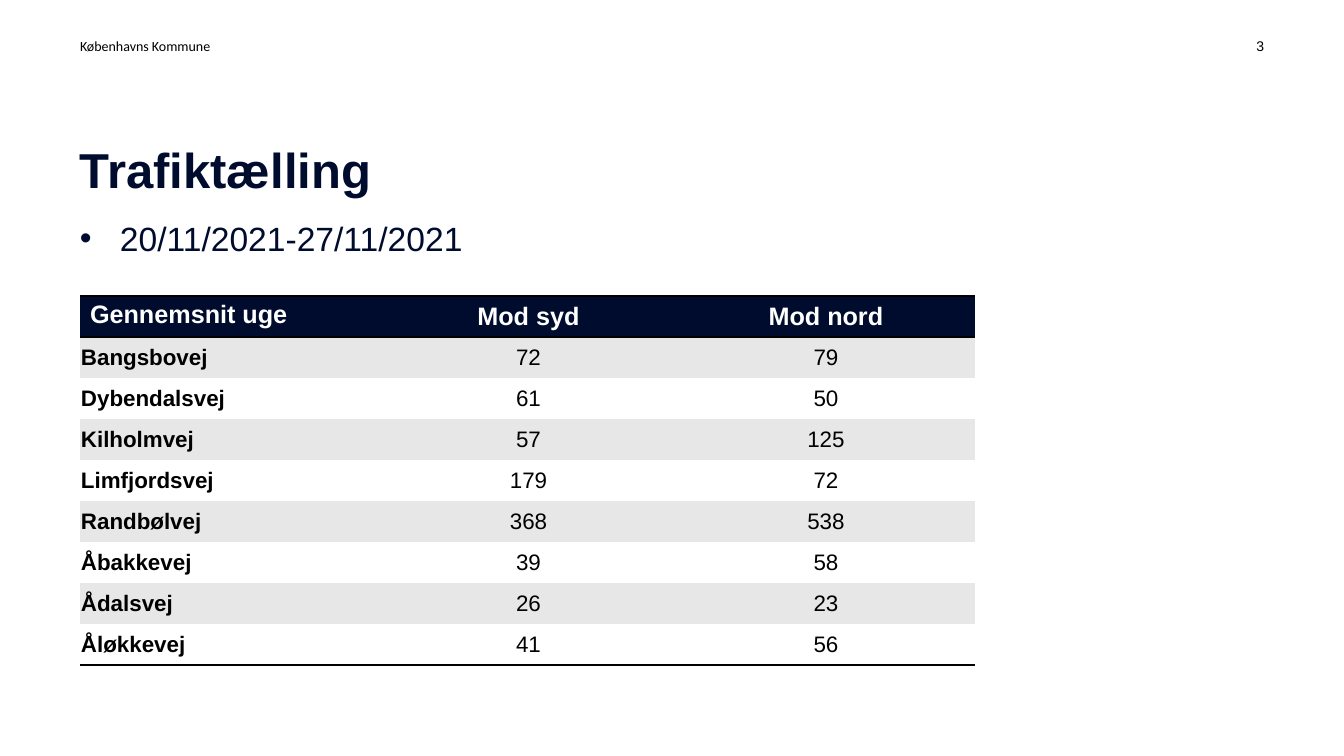
import pptx
import pptx.util
import pptx.dml.color
import pptx.enum.text
import pptx.oxml
import pptx.oxml.ns

theme = {
    "navy": "000C2E", "black": "000000", "white": "FFFFFF", "band": "E7E7E7",
    "font": "Arial", "small": 10, "title": 35, "body": 24, "head": 18, "cell": 16,
}
align = pptx.enum.text.PP_ALIGN
anchor = pptx.enum.text.MSO_ANCHOR
color = pptx.dml.color.RGBColor.from_string
names = pptx.oxml.ns.nsdecls("a")


def px(count):
    return pptx.util.Emu(round(count * 914400 / 100.8))


def style(para, size, tint, bold=False, face=theme["font"]):
    for run in para.runs:
        run.font.name = face
        run.font.size = pptx.util.Pt(size)
        run.font.bold = bold
        run.font.color.rgb = color(tint)


deck = pptx.Presentation()
deck.slide_width, deck.slide_height = px(1344), px(756)
slide = deck.slides.add_slide(deck.slide_layouts[6])

# Text boxes
texts = [
    ("Københavns Kommune", (80, 34, 388, 20), "small", "black", "Calibri", anchor.BOTTOM),
    ("3", (1221, 34, 43, 20), "small", "black", theme["font"], anchor.BOTTOM),
    ("Trafiktælling", (80, 99, 1185, 99), "title", "navy", theme["font"], anchor.BOTTOM),
    ("20/11/2021-27/11/2021", (80, 218, 1185, 60), "body", "navy", theme["font"], anchor.TOP),
]
paras = {}
for text, place, size, tint, face, hold in texts:
    frame = slide.shapes.add_textbox(*map(px, place)).text_frame
    frame.word_wrap = True
    frame.vertical_anchor = hold
    frame.margin_left = frame.margin_right = frame.margin_top = frame.margin_bottom = 0
    frame.text = text
    paras[text] = frame.paragraphs[0]
    style(frame.paragraphs[0], theme[size], theme[tint], size == "title", face)

paras["3"].alignment = align.RIGHT
paras["Trafiktælling"].line_spacing = 0.83
props = paras["20/11/2021-27/11/2021"]._p.get_or_add_pPr()
props.set("marL", str(px(40)))
props.set("indent", str(-px(40)))
props.append(pptx.oxml.parse_xml(f'<a:buFont {names} typeface="Arial"/>'))
props.append(pptx.oxml.parse_xml(f'<a:buChar {names} char="•"/>'))

# Traffic counts
counts = [
    ("Gennemsnit uge", "Mod syd", "Mod nord"),
    ("Bangsbovej", 72, 79),
    ("Dybendalsvej", 61, 50),
    ("Kilholmvej", 57, 125),
    ("Limfjordsvej", 179, 72),
    ("Randbølvej", 368, 538),
    ("Åbakkevej", 39, 58),
    ("Ådalsvej", 26, 23),
    ("Åløkkevej", 41, 56),
]
widths = (300, 297, 298)
height = 41
last = len(counts) - 1
table = slide.shapes.add_table(
    len(counts), len(widths), px(80), px(296), px(sum(widths)), px(height * len(counts))
).table
table.horz_banding = False
plain = "{2D5ABB26-0587-4C30-8999-92F81FD0307C}"  # no style, no grid
table._tbl.tblPr.find(pptx.oxml.ns.qn("a:tableStyleId")).text = plain
for col, width in zip(table.columns, widths):
    col.width = px(width)

for r, values in enumerate(counts):
    table.rows[r].height = px(height)
    head = r == 0
    sides = ("lnT", "lnB") if head else ("lnB",) if r == last else ()
    fill = theme["navy" if head else "band" if r % 2 else "white"]
    for c, value in enumerate(values):
        cell = table.cell(r, c)
        cell.text = str(value)
        para = cell.text_frame.paragraphs[0]
        para.alignment = align.CENTER if c else align.LEFT
        cell.vertical_anchor = anchor.TOP if head and c == 0 else anchor.MIDDLE
        if head:
            style(para, theme["head"], theme["white"], True)
        else:
            style(para, theme["cell"], theme["black"], c == 0)
            cell.margin_left = cell.margin_right = cell.margin_top = px(1)
            cell.margin_bottom = 0
        for side in sides:
            cell._tc.get_or_add_tcPr().append(pptx.oxml.parse_xml(
                f'<a:{side} {names} w="{pptx.util.Pt(2)}"><a:solidFill>'
                f'<a:srgbClr val="{theme["black"]}"/></a:solidFill></a:{side}>'))
        cell.fill.solid()
        cell.fill.fore_color.rgb = color(fill)

deck.save("out.pptx")
